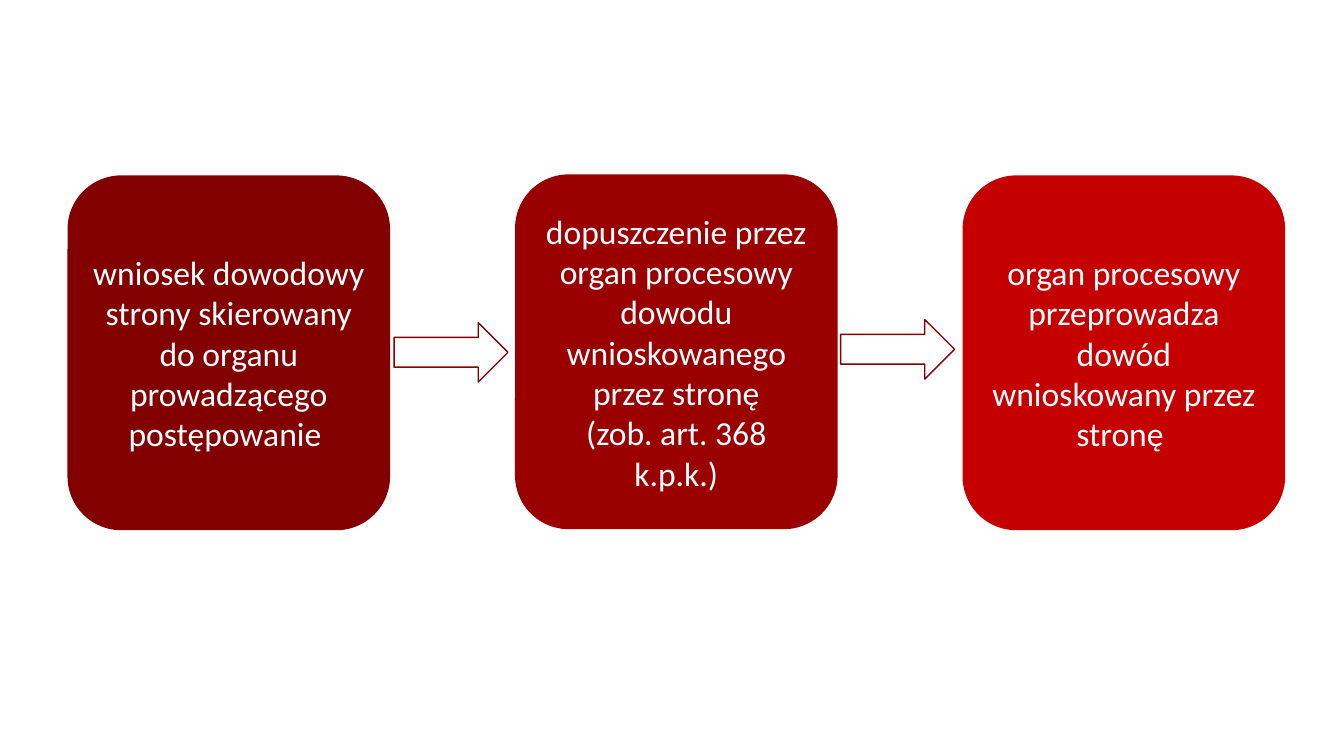
from pptx import Presentation
from pptx.dml.color import RGBColor
from pptx.enum import shapes, text
from pptx.util import Pt

WHITE = "FFFFFF"
DARK = "820000"


def color(value):
    return RGBColor.from_string(value)


class Deck:
    font = "Calibri"
    size = 24

    def __init__(self, width, height):
        self.deck = Presentation()
        self.deck.slide_width = Pt(width)
        self.deck.slide_height = Pt(height)
        self.slide = self.deck.slides.add_slide(self.deck.slide_layouts[6])

    def shape(self, kind, left, top, width, height):
        item = self.slide.shapes.add_shape(
            kind, Pt(left), Pt(top), Pt(width), Pt(height))
        item.shadow.inherit = False
        return item

    def box(self, left, top, width, height, fill, lines):
        kind = shapes.MSO_SHAPE.ROUNDED_RECTANGLE
        item = self.shape(kind, left, top, width, height)
        item.fill.solid()
        item.fill.fore_color.rgb = color(fill)
        item.line.fill.background()
        frame = item.text_frame
        frame.word_wrap = True
        frame.vertical_anchor = text.MSO_ANCHOR.MIDDLE
        for index, line in enumerate(lines):
            para = frame.add_paragraph() if index else frame.paragraphs[0]
            para.alignment = text.PP_ALIGN.CENTER
            run = para.add_run()
            run.text = line
            run.font.name = self.font
            run.font.size = Pt(self.size)
            run.font.color.rgb = color(WHITE)

    def arrow(self, left, top, width, height):
        kind = shapes.MSO_SHAPE.RIGHT_ARROW
        item = self.shape(kind, left, top, width, height)
        item.fill.background()
        item.line.color.rgb = color(DARK)
        item.line.width = Pt(1)


def main():
    deck = Deck(960, 540)
    left, pitch = 48.24, 319.68
    steps = [
        (125.28, DARK, [
            "wniosek dowodowy strony skierowany do organu "
            "prowadzącego postępowanie "]),
        (124.56, "9A0000", [
            "dopuszczenie przez organ procesowy dowodu "
            "wnioskowanego przez stronę",
            "(zob. art. 368 k.p.k.)"]),
        (125.28, "C40000", [
            "organ procesowy przeprowadza dowód "
            "wnioskowany przez stronę "]),
    ]
    for index, (top, fill, lines) in enumerate(steps):
        deck.box(left + index * pitch, top, 230.4, 253.44, fill, lines)
    for index, top in enumerate((230.4, 228.24)):
        deck.arrow(281.5 + index * 319, top, 81.36, 42.48)
    deck.deck.save("out.pptx")


if __name__ == "__main__":
    main()
